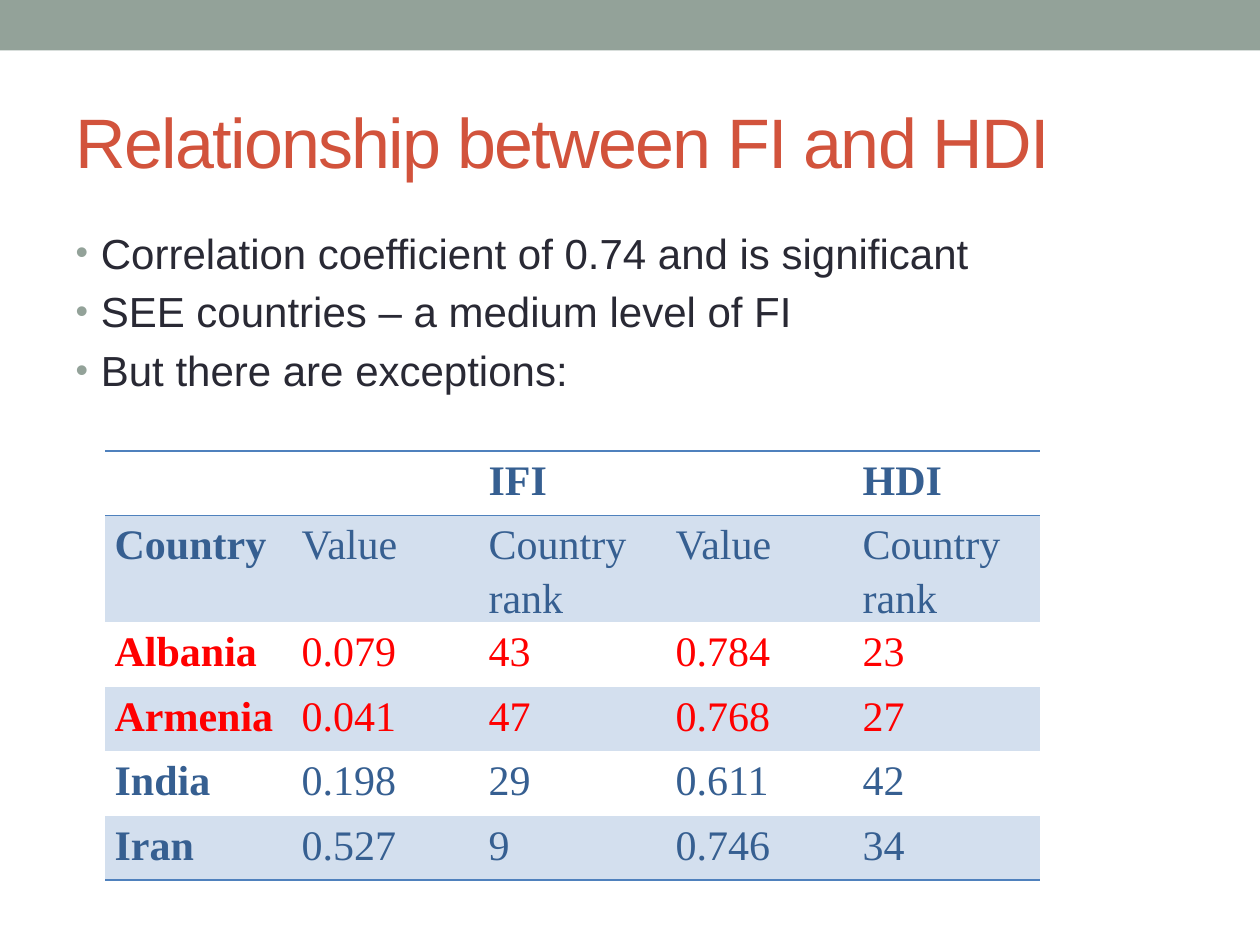
from lxml import etree
from pptx import Presentation
from pptx.dml.color import RGBColor
from pptx.enum.shapes import MSO_SHAPE as Shape
from pptx.enum.text import MSO_ANCHOR as Anchor, PP_ALIGN as Align, MSO_AUTO_SIZE as AutoSize
from pptx.oxml.ns import qn
from pptx.util import Cm, Pt

SAGE = RGBColor(0x93, 0xA2, 0x99)
RUST = RGBColor(0xD2, 0x53, 0x3C)
INK = RGBColor(0x29, 0x29, 0x34)
NAVY = RGBColor(0x36, 0x5F, 0x91)
RED = RGBColor(0xFF, 0x00, 0x00)
BAND = RGBColor(0xD3, 0xDF, 0xEE)
RULE = RGBColor(0x4F, 0x81, 0xBD)

BULLETS = [
    "Correlation coefficient of 0.74 and is significant",
    "SEE countries – a medium level of FI",
    "But there are exceptions:",
]
ROWS = [
    ["", "", "IFI", "", "HDI"],
    ["Country", "Value", "Country rank", "Value", "Country rank"],
    ["Albania", "0.079", "43", "0.784", "23"],
    ["Armenia", "0.041", "47", "0.768", "27"],
    ["India", "0.198", "29", "0.611", "42"],
    ["Iran", "0.527", "9", "0.746", "34"],
]
RED_ROWS = (2, 3)


class SlideBuilder:
    sans = "Arial"
    serif = "Times New Roman"

    def __init__(self, prs):
        self.slide = prs.slides.add_slide(prs.slide_layouts[1])

    def place(self, sp, x, y, w, h):
        sp.left, sp.top, sp.width, sp.height = Cm(x), Cm(y), Cm(w), Cm(h)

    def style(self, p, font, size, color, bold=False):
        for r in p.runs:
            r.font.name, r.font.size, r.font.bold = font, Pt(size), bold
            r.font.color.rgb = color

    def bar(self, x, y, w, h, color):
        sp = self.slide.shapes.add_shape(Shape.RECTANGLE, Cm(x), Cm(y), Cm(w), Cm(h))
        sp.shadow.inherit = False
        sp.fill.solid()
        sp.fill.fore_color.rgb = color
        sp.line.fill.background()

    def title(self, text, *box):
        sp = self.slide.shapes.title
        self.place(sp, *box)
        tf = sp.text_frame
        tf.text = text
        tf.vertical_anchor = Anchor.MIDDLE
        tf.auto_size = AutoSize.NONE
        p = tf.paragraphs[0]
        p.alignment = Align.LEFT
        self.style(p, self.sans, 40, RUST)
        p.runs[0].font._element.set("spc", "-100")

    def bullets(self, items, *box):
        sp = self.slide.placeholders[1]
        self.place(sp, *box)
        tf = sp.text_frame
        tf.text = "\n".join(items)
        tf.auto_size = AutoSize.NONE
        for p in tf.paragraphs:
            self.style(p, self.sans, 24, INK)
            pPr = p._p.get_or_add_pPr()
            pPr.set("marL", str(Cm(0.51)))
            pPr.set("indent", str(-Cm(0.51)))
            color = etree.SubElement(pPr, qn("a:buClr"))
            etree.SubElement(color, qn("a:srgbClr"), val=str(SAGE))
            etree.SubElement(pPr, qn("a:buSzPct"), val="85000")
            etree.SubElement(pPr, qn("a:buFont"), typeface=self.sans)
            etree.SubElement(pPr, qn("a:buChar"), char="•")

    def borders(self, cell, ruled):
        tcPr = cell._tc.get_or_add_tcPr()
        for side in "LRTB":
            ln = etree.SubElement(tcPr, qn(f"a:ln{side}"), w=str(Pt(1)))
            if side in ruled:
                fill = etree.SubElement(ln, qn("a:solidFill"))
                etree.SubElement(fill, qn("a:srgbClr"), val=str(RULE))
            else:
                etree.SubElement(ln, qn("a:noFill"))

    def cell(self, cell, text, color, bold, banded, ruled):
        cell.margin_left = cell.margin_right = Cm(0.19)
        cell.margin_top = cell.margin_bottom = 0
        cell.text = text
        p = cell.text_frame.paragraphs[0]
        p.line_spacing = 1.15
        p.space_after = Pt(10)
        self.style(p, self.serif, 24, color, bold)
        self.borders(cell, ruled)
        if banded:
            cell.fill.solid()
            cell.fill.fore_color.rgb = BAND
        else:
            cell.fill.background()

    def table(self, rows, x, y, col_w, row_h):
        n, m = len(rows), len(rows[0])
        table = self.slide.shapes.add_table(
            n, m, Cm(x), Cm(y), Cm(col_w * m), Cm(row_h * n)).table
        table.first_row = table.horz_banding = False
        # Rules above and below the heading row, and under the last row
        ruled = {0: "TB", 1: "T", n - 1: "B"}
        for i, row in enumerate(rows):
            color = RED if i in RED_ROWS else NAVY
            for j, text in enumerate(row):
                self.cell(table.cell(i, j), text, color, bold=i == 0 or j == 0,
                          banded=i % 2 == 1, ruled=ruled.get(i, ""))


def main():
    prs = Presentation()
    prs.slide_width, prs.slide_height = Cm(25.4), Cm(19.05)
    s = SlideBuilder(prs)

    # Top band
    s.bar(0, 0, 25.4, 1.02, SAGE)

    # Title and findings
    s.title("Relationship between FI and HDI", 1.27, 1.47, 22.86, 2.74)
    s.bullets(BULLETS, 1.27, 4.45, 22.86, 13.54)

    # Exceptions
    s.table(ROWS, 2.12, 9.09, 3.77, 1.3)

    prs.save("out.pptx")


if __name__ == "__main__":
    main()
